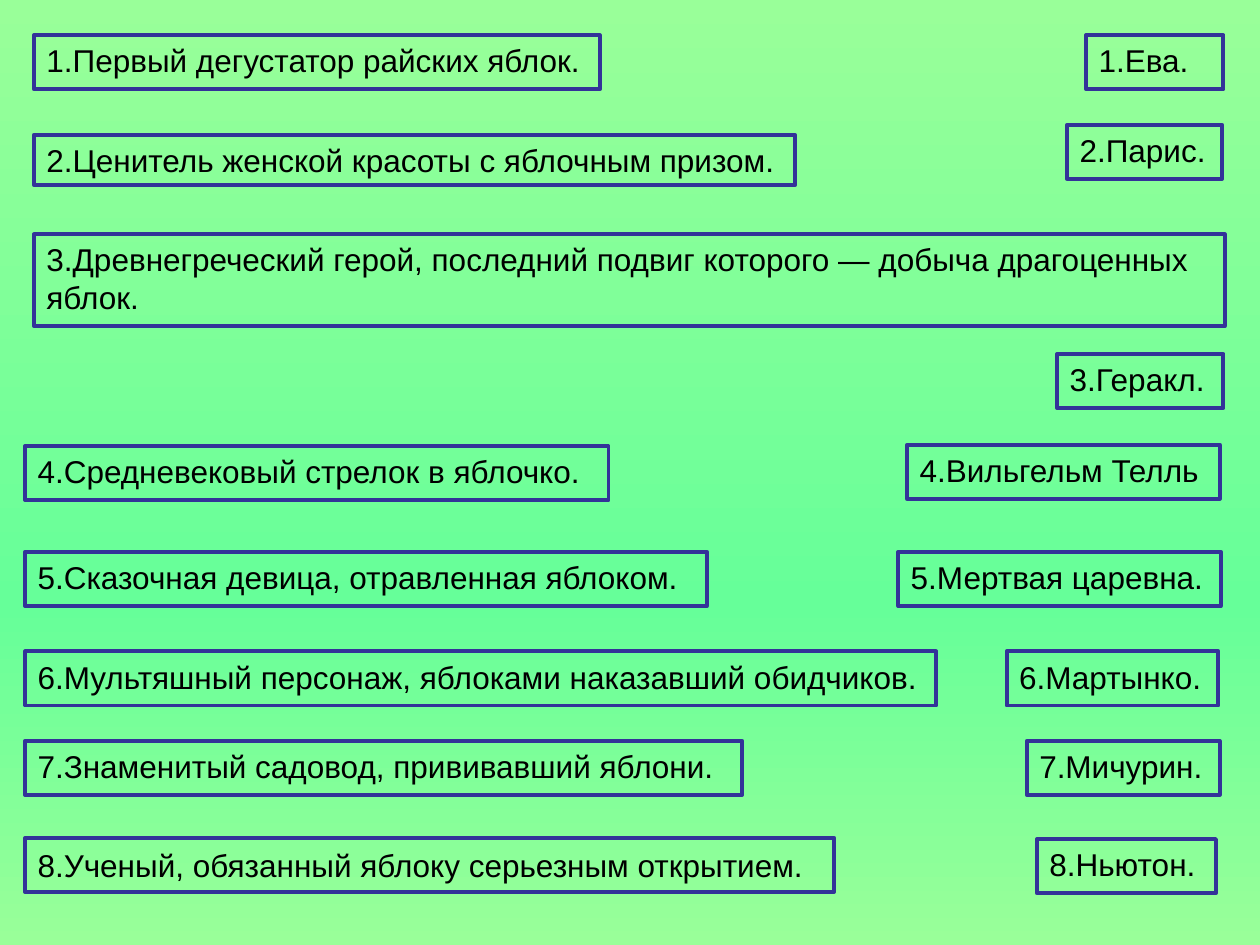
import copy
from dataclasses import dataclass

import pptx
import pptx.dml.color
import pptx.enum.text
import pptx.util


@dataclass(frozen=True)
class Theme:
    background: tuple = ((0, "99FF99"), (64, "66FF99"), (100, "99FF99"))
    border: str = "333399"
    border_width: float = 2.25
    text: str = "000000"
    font: str = "Arial"
    size: int = 18


THEME = Theme()
ROW_HEIGHT = 0.43
UPPER_LEFT, LOWER_LEFT = 0.27, 0.2  # left edges of the questions
TOP = pptx.enum.text.MSO_ANCHOR.TOP
MIDDLE = pptx.enum.text.MSO_ANCHOR.MIDDLE

# Text, left, top, width, height, anchor
QUESTIONS = (
    ("Первый дегустатор райских яблок.", UPPER_LEFT, 0.28, 4.49, ROW_HEIGHT, TOP),
    ("Ценитель женской красоты с яблочным призом.", UPPER_LEFT, 1.07, 6.04, 0.4, TOP),
    ("Древнегреческий герой, последний подвиг которого — добыча драгоценных яблок.",
     UPPER_LEFT, 1.86, 9.45, 0.73, TOP),
    ("Средневековый стрелок в яблочко.", LOWER_LEFT, 3.54, 4.63, ROW_HEIGHT, TOP),
    ("Сказочная девица, отравленная яблоком.", LOWER_LEFT, 4.38, 5.41, ROW_HEIGHT, TOP),
    ("Мультяшный персонаж, яблоками наказавший обидчиков.",
     LOWER_LEFT, 5.17, 7.23, ROW_HEIGHT, TOP),
    ("Знаменитый садовод, прививавший яблони.", LOWER_LEFT, 5.88, 5.69, ROW_HEIGHT, TOP),
    ("Ученый, обязанный яблоку серьезным открытием.",
     LOWER_LEFT, 6.65, 6.42, ROW_HEIGHT, MIDDLE),
)

ANSWERS = (
    ("Ева.", 8.62, 0.28, 1.09, ROW_HEIGHT, TOP),
    ("Парис.", 8.47, 0.99, 1.23, ROW_HEIGHT, TOP),
    ("Геракл.", 8.39, 2.81, 1.32, ROW_HEIGHT, TOP),
    ("Вильгельм Телль", 7.2, 3.53, 2.48, ROW_HEIGHT, TOP),
    ("Мертвая царевна.", 7.13, 4.38, 2.56, ROW_HEIGHT, TOP),
    ("Мартынко.", 7.99, 5.17, 1.68, ROW_HEIGHT, TOP),
    ("Мичурин.", 8.15, 5.88, 1.53, ROW_HEIGHT, TOP),
    ("Ньютон.", 8.23, 6.66, 1.42, ROW_HEIGHT, TOP),
)


def rgb(value):
    return pptx.dml.color.RGBColor.from_string(value)


def apply_format(target, values):
    for name, value in values.items():
        setattr(target, name, value)


def paint_background(page):
    fill = page.background.fill
    fill.gradient()
    fill.gradient_angle = 270
    # A new gradient has two stops; the middle one is added in XML
    stop_list = page.element.xpath(".//a:gsLst")[0]
    stop_list.insert(1, copy.deepcopy(stop_list[0]))
    for stop, (percent, color) in zip(fill.gradient_stops, THEME.background):
        stop.position = percent / 100
        stop.color.rgb = rgb(color)


def add_framed_text(page, text, left, top, width, height, anchor):
    box = page.shapes.add_textbox(
        *(pptx.util.Inches(length) for length in (left, top, width, height)))
    box.line.color.rgb = rgb(THEME.border)
    box.line.width = pptx.util.Pt(THEME.border_width)
    apply_format(box.text_frame, {"word_wrap": True, "vertical_anchor": anchor})
    span = box.text_frame.paragraphs[0].add_run()
    span.text = text
    apply_format(span.font, {"name": THEME.font, "size": pptx.util.Pt(THEME.size)})
    span.font.color.rgb = rgb(THEME.text)


def add_numbered_boxes(page, entries):
    for number, (text, *place) in enumerate(entries, start=1):
        add_framed_text(page, f"{number}.{text}", *place)


def main():
    deck = pptx.Presentation()
    apply_format(deck, {"slide_width": pptx.util.Inches(10),
                        "slide_height": pptx.util.Inches(7.5)})
    page = deck.slides.add_slide(deck.slide_layouts[6])  # blank layout
    paint_background(page)
    add_numbered_boxes(page, QUESTIONS)
    add_numbered_boxes(page, ANSWERS)
    deck.save("out.pptx")


if __name__ == "__main__":
    main()
